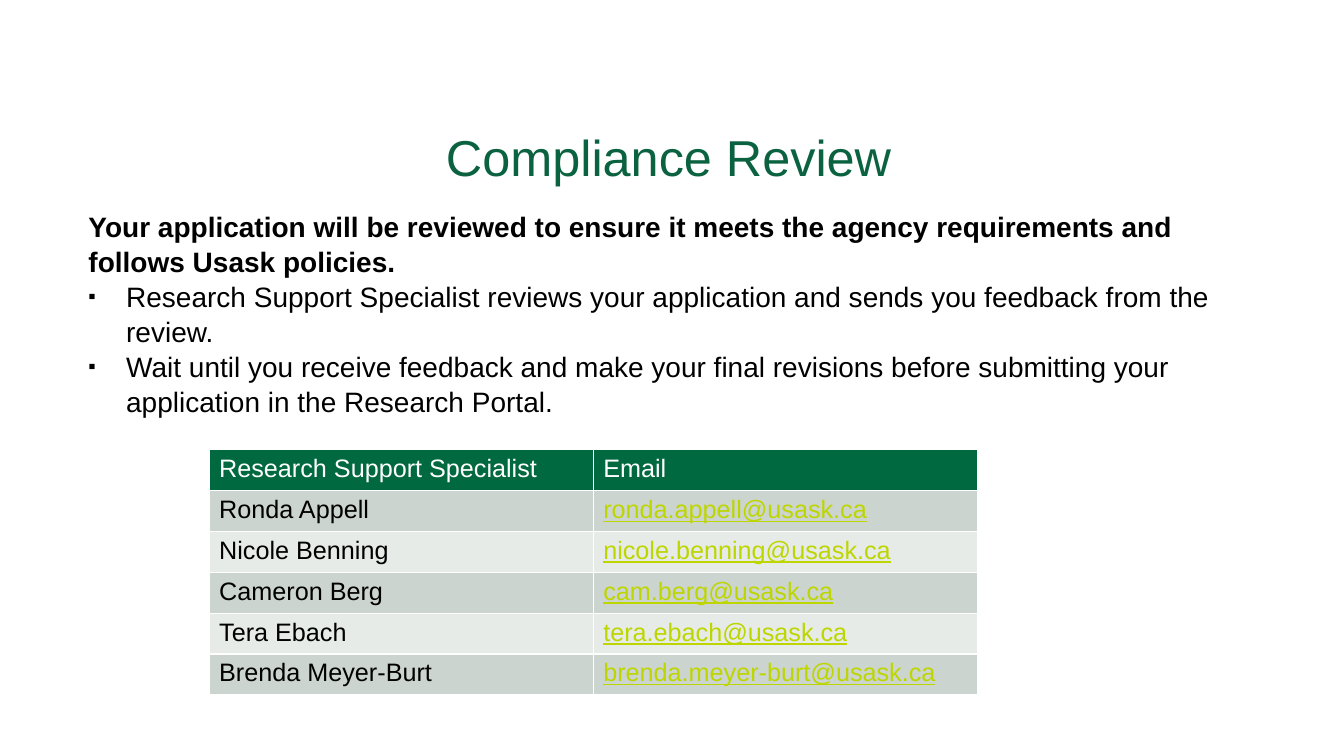
from lxml.etree import SubElement as Sub
from pptx import Presentation
from pptx.dml.color import RGBColor as RGB
from pptx.enum.text import PP_ALIGN as Align
from pptx.oxml.ns import qn
from pptx.util import Cm, Pt


def style(font, size, color):
    font.name = "Arial"
    font.size = Pt(size)
    font.color.rgb = RGB.from_string(color)


def add_box(top, height):
    frame = slide.shapes.add_textbox(Cm(1.98), Cm(top), Cm(29.74), Cm(height)).text_frame
    frame.word_wrap = True
    return frame


prs = Presentation()
prs.slide_width, prs.slide_height = Cm(33.87), Cm(19.05)
slide = prs.slides.add_slide(prs.slide_layouts[6])

# Title
title = add_box(2.92, 2.74)
title.margin_top = Cm(0.26)
title.text = "Compliance Review"
head = title.paragraphs[0]
head.alignment = Align.CENTER
style(head.runs[0].font, 36, "0B6240")

# Lead sentence and bullets
body = add_box(5.13, 6.73)
body.text = "\n".join([
    "Your application will be reviewed to ensure it meets the agency requirements and follows Usask policies.",
    "Research Support Specialist reviews your application and sends you feedback from the review.",
    "Wait until you receive feedback and make your final revisions before submitting your application in the Research Portal.",
])
for i, para in enumerate(body.paragraphs):
    para.line_spacing = 1.04
    if i > 0:
        props = para._p.get_or_add_pPr()
        props.set("marL", str(Cm(0.95)))
        props.set("indent", str(-Cm(0.95)))
        Sub(props, qn("a:buSzPct"), val="75000")
        Sub(props, qn("a:buFont"), typeface="Arial")
        Sub(props, qn("a:buChar"), char="▪")
    font = para.runs[0].font
    style(font, 20, "000000")
    font.bold = i == 0

# Contact table
rows = [
    ("Research Support Specialist", "Email"),
    ("Ronda Appell", "ronda.appell@usask.ca"),
    ("Nicole Benning", "nicole.benning@usask.ca"),
    ("Cameron Berg", "cam.berg@usask.ca"),
    ("Tera Ebach", "tera.ebach@usask.ca"),
    ("Brenda Meyer-Burt", "brenda.meyer-burt@usask.ca"),
]
table = slide.shapes.add_table(len(rows), 2, Cm(5.27), Cm(11.33), Cm(19.36), Cm(6.18)).table
for r, row in enumerate(rows):
    table.rows[r].height = Cm(1.03)
    for c, text in enumerate(row):
        cell = table.cell(r, c)
        cell.text = text
        font = cell.text_frame.paragraphs[0].runs[0].font
        email = r > 0 and c == 1
        style(font, 18, "FFFFFF" if r == 0 else "BDD600" if email else "000000")
        font.bold = False
        font.underline = email

        # White borders, then the banded fill
        props = cell._tc.get_or_add_tcPr()
        for side in "LRTB":
            line = Sub(props, qn(f"a:ln{side}"), w=str(Pt(1)))
            Sub(Sub(line, qn("a:solidFill")), qn("a:srgbClr"), val="FFFFFF")
        cell.fill.solid()
        band = "006940" if r == 0 else "CCD4CF" if r % 2 else "E7EBE8"
        cell.fill.fore_color.rgb = RGB.from_string(band)

prs.save("out.pptx")
